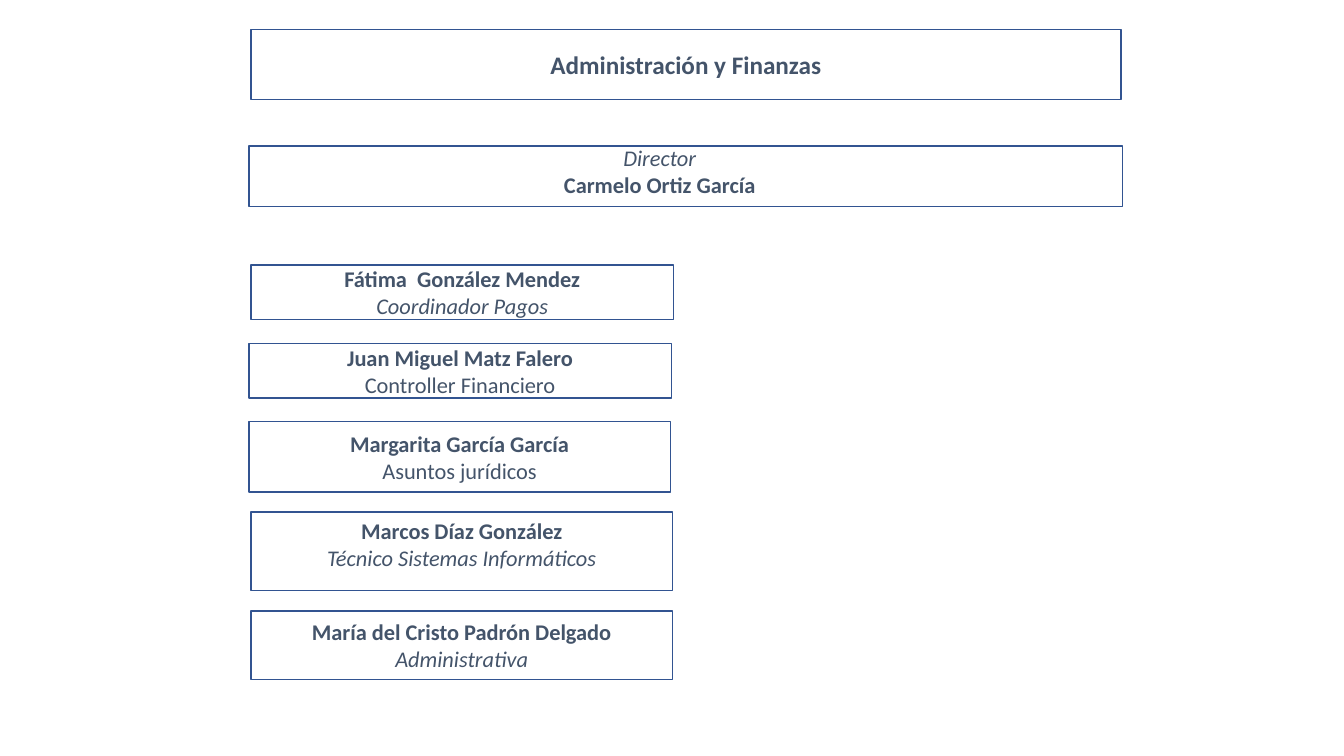
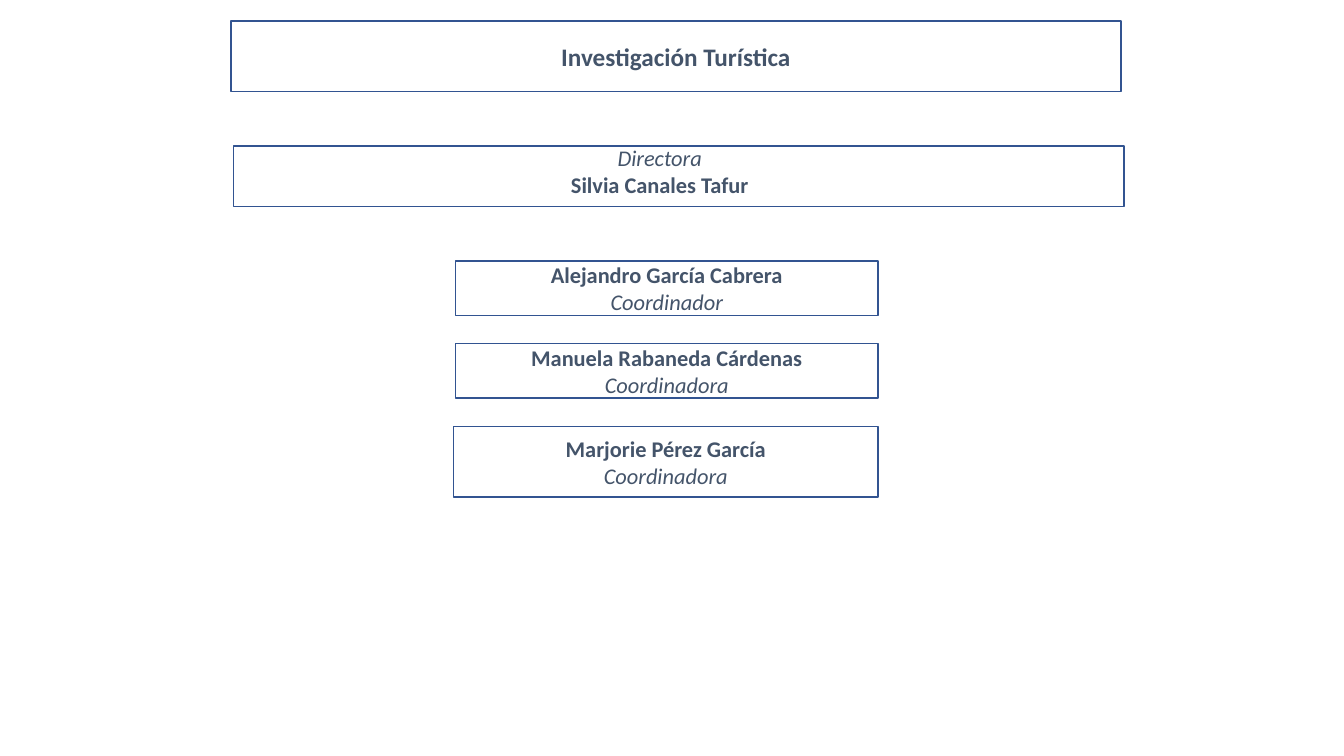
from dataclasses import dataclass

from pptx import Presentation
from pptx.dml.color import RGBColor
from pptx.enum import shapes, text
from pptx.util import Pt


@dataclass(frozen=True)
class Theme:
    font: str = "Calibri"
    ink: RGBColor = RGBColor(0x44, 0x54, 0x6A)
    edge: RGBColor = RGBColor(0x32, 0x54, 0x91)
    rule: float = 1
    head: float = 18
    body: float = 16


class Chart:
    """Builds the organisation chart of one department per slide."""

    def __init__(self, deck, theme):
        self.deck, self.theme = deck, theme
        self.slide = None

    def start(self):
        self.slide = self.deck.slides.add_slide(self.deck.slide_layouts[5])

    def frame(self, shape):
        shape.line.color.rgb = self.theme.edge
        shape.line.width = Pt(self.theme.rule)

    def label(self, shape, lines, size, anchor):
        """Fill a shape with centred lines of (words, bold, italic)."""
        body = shape.text_frame
        body.text = "\n".join(words for words, _, _ in lines)
        body.word_wrap = True
        body.auto_size = text.MSO_AUTO_SIZE.NONE
        body.vertical_anchor = anchor
        body.margin_left = body.margin_right = Pt(7.2)
        body.margin_top = body.margin_bottom = Pt(3.6)
        for para, (_, bold, slant) in zip(body.paragraphs, lines):
            para.alignment = text.PP_ALIGN.CENTER
            for run in para.runs:
                font = run.font
                font.name, font.size = self.theme.font, Pt(size)
                font.bold, font.italic = bold, slant
                font.color.rgb = self.theme.ink

    def title(self, name, left, top, width):
        shape = self.slide.shapes.title
        shape.left, shape.top = Pt(left), Pt(top)
        shape.width, shape.height = Pt(width), Pt(50.4)
        self.frame(shape)
        self.label(shape, [(name, True, False)], self.theme.head,
                   text.MSO_ANCHOR.MIDDLE)

    def box(self, left, top, width, height):
        shape = self.slide.shapes.add_shape(
            shapes.MSO_SHAPE.RECTANGLE, Pt(left), Pt(top), Pt(width), Pt(height))
        shape.shadow.inherit = False
        shape.fill.background()
        self.frame(shape)
        return shape

    def lead(self, role, name, left, width):
        self.box(left, 104.4, width, 43.2)
        area = self.slide.shapes.add_textbox(
            Pt(309.6), Pt(99.4), Pt(323.3), Pt(46.1))
        self.label(area, [(role, False, True), (name, True, False)],
                   self.theme.body, text.MSO_ANCHOR.TOP)

    def member(self, name, role, place, slant=True,
               anchor=text.MSO_ANCHOR.MIDDLE):
        self.label(self.box(*place), [(name, True, False), (role, False, slant)],
                   self.theme.body, anchor)


def main():
    deck = Presentation()
    deck.slide_width, deck.slide_height = Pt(960), Pt(540)
    chart = Chart(deck, Theme())

    chart.start()
    chart.title("Administración y Finanzas", 179.3, 20.9, 621.4)
    chart.lead("Director", "Carmelo Ortiz García", 177.8, 624.2)
    chart.member("Fátima  González Mendez", "Coordinador Pagos",
                 (179.3, 189.4, 301.7, 38.9))
    chart.member("Juan Miguel Matz Falero", "Controller Financiero",
                 (177.8, 245.5, 301.7, 38.9), slant=False)
    chart.member("Margarita García García", "Asuntos jurídicos",
                 (177.8, 301, 301, 50.4), slant=False)
    chart.member("Marcos Díaz González", "Técnico Sistemas Informáticos",
                 (179.3, 365.8, 301, 56.2), anchor=text.MSO_ANCHOR.TOP)
    chart.member("María del Cristo Padrón Delgado", "Administrativa",
                 (179.3, 436.3, 301, 49))

    chart.start()
    chart.title("Investigación Turística", 164.9, 15.1, 635.8)
    chart.lead("Directora", "Silvia Canales Tafur", 167, 635.8)
    chart.member("Alejandro García Cabrera", "Coordinador",
                 (325.4, 186.5, 301.7, 38.9))
    chart.member("Manuela Rabaneda Cárdenas", "Coordinadora",
                 (325.4, 245.5, 301.7, 38.9))
    chart.member("Marjorie Pérez García", "Coordinadora",
                 (324, 304.6, 303.1, 50.4))

    deck.save("out.pptx")


if __name__ == "__main__":
    main()
